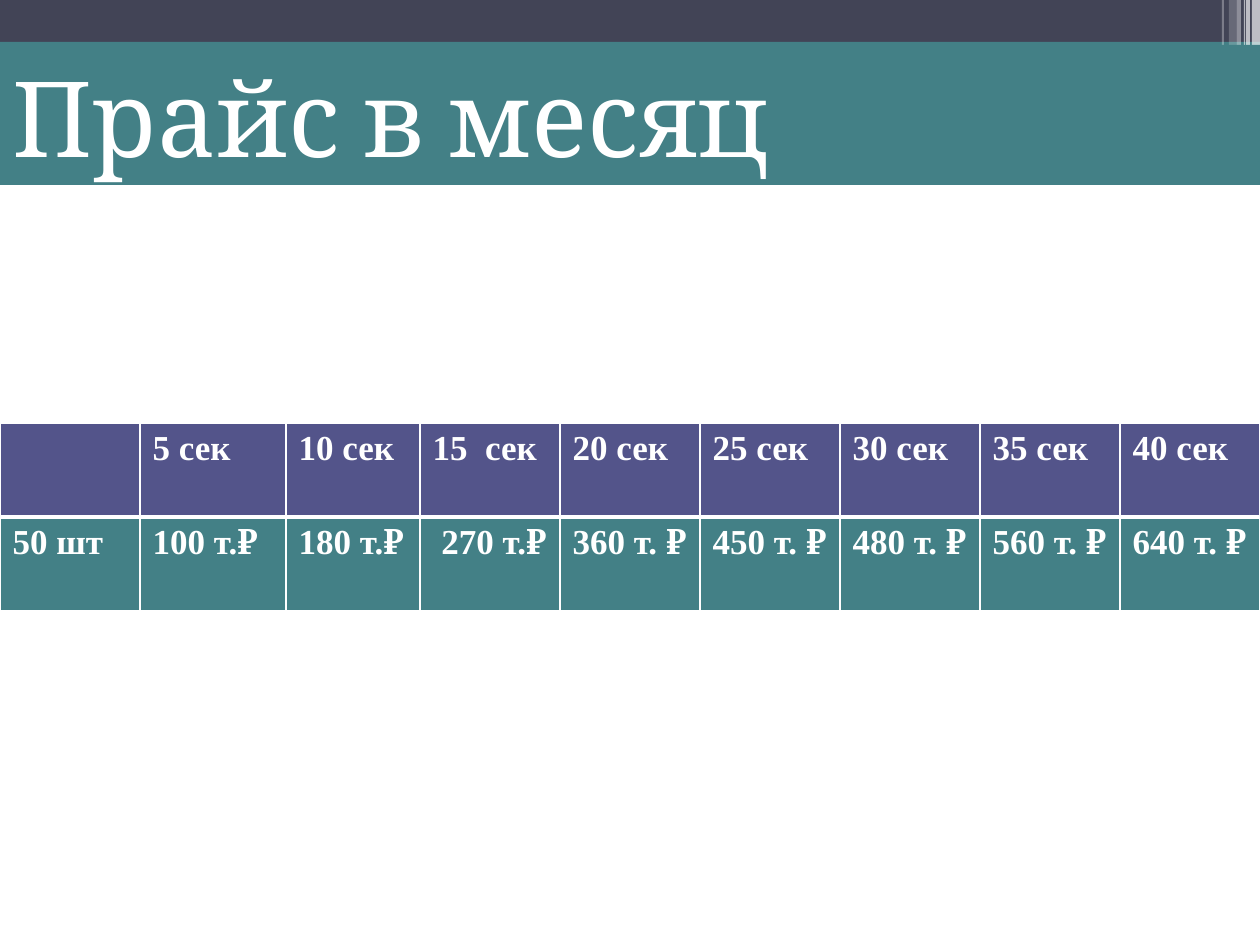
from lxml import etree
from pptx import Presentation
from pptx.dml.color import RGBColor
from pptx.enum.shapes import MSO_SHAPE
from pptx.enum.text import MSO_ANCHOR, MSO_AUTO_SIZE, PP_ALIGN
from pptx.oxml.ns import qn
from pptx.util import Pt

RECTANGLE = MSO_SHAPE.RECTANGLE
MIDDLE = MSO_ANCHOR.MIDDLE
LEFT = PP_ALIGN.LEFT
NO_AUTOFIT = MSO_AUTO_SIZE.NONE
PX = 914400 // 126
TEAL, SLATE, PURPLE, WHITE = "438086", "424456", "53548A", "FFFFFF"


def paint(fill, color, opacity=100):
    fill.solid()
    fill.fore_color.rgb = RGBColor.from_string(color)
    if opacity < 100:
        color_element = fill._xPr.find(qn("a:solidFill"))[0]
        etree.SubElement(color_element, qn("a:alpha"), val=str(opacity * 1000))


def format_runs(text_frame, font_name, size, bold=False):
    for run in text_frame.paragraphs[0].runs:
        run.font.name = font_name
        run.font.size = Pt(size)
        run.font.bold = bold
        run.font.color.rgb = RGBColor.from_string(WHITE)


presentation = Presentation()
presentation.slide_width = 1260 * PX
presentation.slide_height = 945 * PX
slide = presentation.slides.add_slide(presentation.slide_layouts[5])

bars = [
    (0, 50, 1260, 11, TEAL, 50),
    (0, 0, 1260, 43, SLATE, 100),
    (0, 42, 1260, 13, TEAL, 100),
    (746, 49, 514, 12, TEAL, 100),
    (746, 61, 514, 25, TEAL, 50),
    (1252, 0, 8, 86, WHITE, 65),
    (1246, 0, 4, 86, WHITE, 65),
    (1244, 0, 1, 86, WHITE, 60),
    (1237, 0, 4, 86, WHITE, 40),
    (1229, 0, 8, 81, WHITE, 20),
    (1222, 0, 2, 81, WHITE, 30),
]
for left, top, width, height, color, opacity in bars:
    bar = slide.shapes.add_shape(RECTANGLE, left * PX, top * PX, width * PX, height * PX)
    bar.shadow.inherit = False
    bar.line.fill.background()
    paint(bar.fill, color, opacity)

title = slide.shapes.title
title.left, title.top, title.width, title.height = 0, 45 * PX, 1260 * PX, 140 * PX
paint(title.fill, TEAL)
title.text_frame.text = "Прайс в месяц"
title.text_frame.auto_size = NO_AUTOFIT
title.text_frame.vertical_anchor = MIDDLE
title.text_frame.paragraphs[0].alignment = LEFT
format_runs(title.text_frame, "Cambria", 60)
slide.shapes._spTree.append(title._element)

rows = [
    ["", "5 сек", "10 сек", "15  сек", "20 сек", "25 сек", "30 сек", "35 сек", "40 сек"],
    ["50 шт", "100 т.₽", "180 т.₽", " 270 т.₽", "360 т. ₽", "450 т. ₽",
     "480 т. ₽", "560 т. ₽", "640 т. ₽"],
]
row_fills = [PURPLE, TEAL]
row_borders = [
    {"L": 1, "R": 1, "T": 1, "B": 3},
    {"L": 1, "R": 1, "T": 3, "B": 1},
]
column_widths = [140, 146, 134] + [140] * 6
table = slide.shapes.add_table(2, 9, 0, 423 * PX, 1260 * PX, 188 * PX).table
for column, width in zip(table.columns, column_widths):
    column.width = width * PX
for row, texts, fill, borders in zip(table.rows, rows, row_fills, row_borders):
    row.height = 94 * PX
    for cell, text in zip(row.cells, texts):
        properties = cell._tc.get_or_add_tcPr()
        for side, points in borders.items():
            line = etree.SubElement(properties, qn("a:ln" + side), w=str(Pt(points)))
            line_fill = etree.SubElement(line, qn("a:solidFill"))
            etree.SubElement(line_fill, qn("a:srgbClr"), val=WHITE)
        paint(cell.fill, fill)
        cell.text_frame.text = text
        format_runs(cell.text_frame, "Times New Roman", 20, bold=True)

presentation.save("out.pptx")
